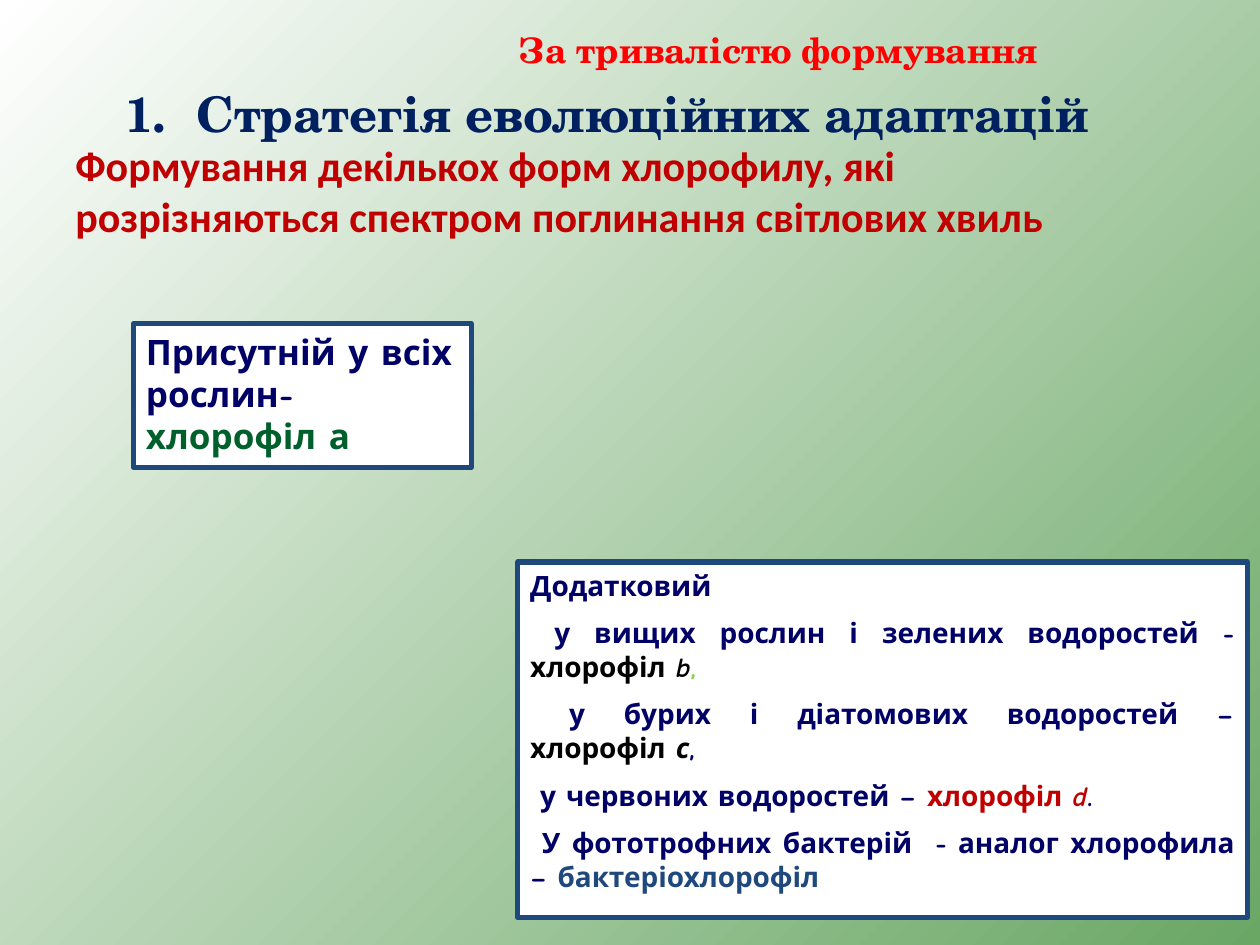
"""Build the slide on chlorophyll forms as evolutionary adaptations."""
from lxml import etree
from pptx import Presentation
from pptx.dml.color import RGBColor
from pptx.enum.shapes import MSO_SHAPE
from pptx.enum.text import MSO_ANCHOR, PP_ALIGN
from pptx.oxml.ns import qn
from pptx.util import Inches, Pt

WHITE = RGBColor(0xFF, 0xFF, 0xFF)
BLACK = RGBColor(0x00, 0x00, 0x00)
LEAF = RGBColor(0x6A, 0xA7, 0x65)
NAVY = RGBColor(0x00, 0x20, 0x60)
INK = RGBColor(0x00, 0x00, 0x66)
BLUE = RGBColor(0x1F, 0x49, 0x7D)
GREEN = RGBColor(0x00, 0x60, 0x2B)
LIME = RGBColor(0x92, 0xD0, 0x50)
CRIMSON = RGBColor(0xC0, 0x00, 0x00)
RED = RGBColor(0xFF, 0x00, 0x00)
SERIF, SANS, COMIC = "TeX Gyre Schola", "Calibri", "Comic Neue"


def add_runs(p, runs, font, size):
    for text, color, *italic in runs:
        r = p.add_run()
        r.text = text
        r.font.name = font
        r.font.size = Pt(size)
        r.font.bold = True
        r.font.italic = bool(italic)
        r.font.color.rgb = color


prs = Presentation()
prs.slide_width, prs.slide_height = Inches(10), Inches(7.5)
s = prs.slides.add_slide(prs.slide_layouts[6])

fill = s.background.fill
fill.gradient()
fill.gradient_angle = 315
for stop, color in zip(fill.gradient_stops, (WHITE, LEAF)):
    stop.color.rgb = color

headings = [
    ((0.9, 0.61, 8.51, 0.57), "Стратегія еволюційних адаптацій", SERIF, 28, NAVY),
    ((0.5, 1.06, 8.74, 0.91),
     "Формування декількох форм хлорофилу, які розрізняються спектром поглинання світлових хвиль",
     SANS, 24, CRIMSON),
    ((4.02, 0.18, 5.98, 0.44), "За тривалістю формування", SERIF, 20, RED),
]
for box, text, font, size, color in headings:
    tf = s.shapes.add_textbox(*map(Inches, box)).text_frame
    tf.word_wrap = True
    p = tf.paragraphs[0]
    add_runs(p, [(text, color)], font, size)
    if size == 28:
        pPr = p._p.get_or_add_pPr()
        pPr.set("marL", str(Inches(0.56)))
        pPr.set("indent", str(-Inches(0.56)))
        etree.SubElement(pPr, qn("a:buFont"), typeface="+mj-lt")
        etree.SubElement(pPr, qn("a:buAutoNum"), type="arabicPeriod")

panels = [
    ((1.06, 2.57, 2.68, 1.14), 20, [
        [("Присутній у всіх рослин-  ", INK), ("хлорофіл а", GREEN)],
    ]),
    ((4.11, 4.46, 5.79, 2.82), 16, [
        [("Додатковий", INK)],
        [(" у вищих рослин і зелених водоростей - ", INK),
         ("хлорофіл\u00a0", BLACK), ("b", BLACK, True), (", ", LIME)],
        [(" у бурих і діатомових водоростей – ", INK),
         ("хлорофіл\u00a0", BLACK), ("с", BLACK, True), (",", INK)],
        [(" у червоних водоростей – ", INK),
         ("хлорофіл\u00a0", CRIMSON), ("d", CRIMSON, True), (".", INK)],
        [(" У фототрофних бактерій  - аналог хлорофила – ", INK),
         ("бактеріохлорофіл ", BLUE)],
    ]),
]
for box, size, paragraphs in panels:
    sp = s.shapes.add_shape(MSO_SHAPE.RECTANGLE, *map(Inches, box))
    sp.shadow.inherit = False
    sp.fill.solid()
    sp.fill.fore_color.rgb = WHITE
    sp.line.color.rgb = BLUE
    sp.line.width = Pt(3)
    tf = sp.text_frame
    tf.word_wrap = True
    tf.vertical_anchor = MSO_ANCHOR.TOP
    for i, runs in enumerate(paragraphs):
        p = tf.add_paragraph() if i else tf.paragraphs[0]
        p.alignment = PP_ALIGN.JUSTIFY if i else PP_ALIGN.LEFT
        p.space_before = Pt(size / 2 if i else 0)
        add_runs(p, runs, COMIC, size)

prs.save("out.pptx")
